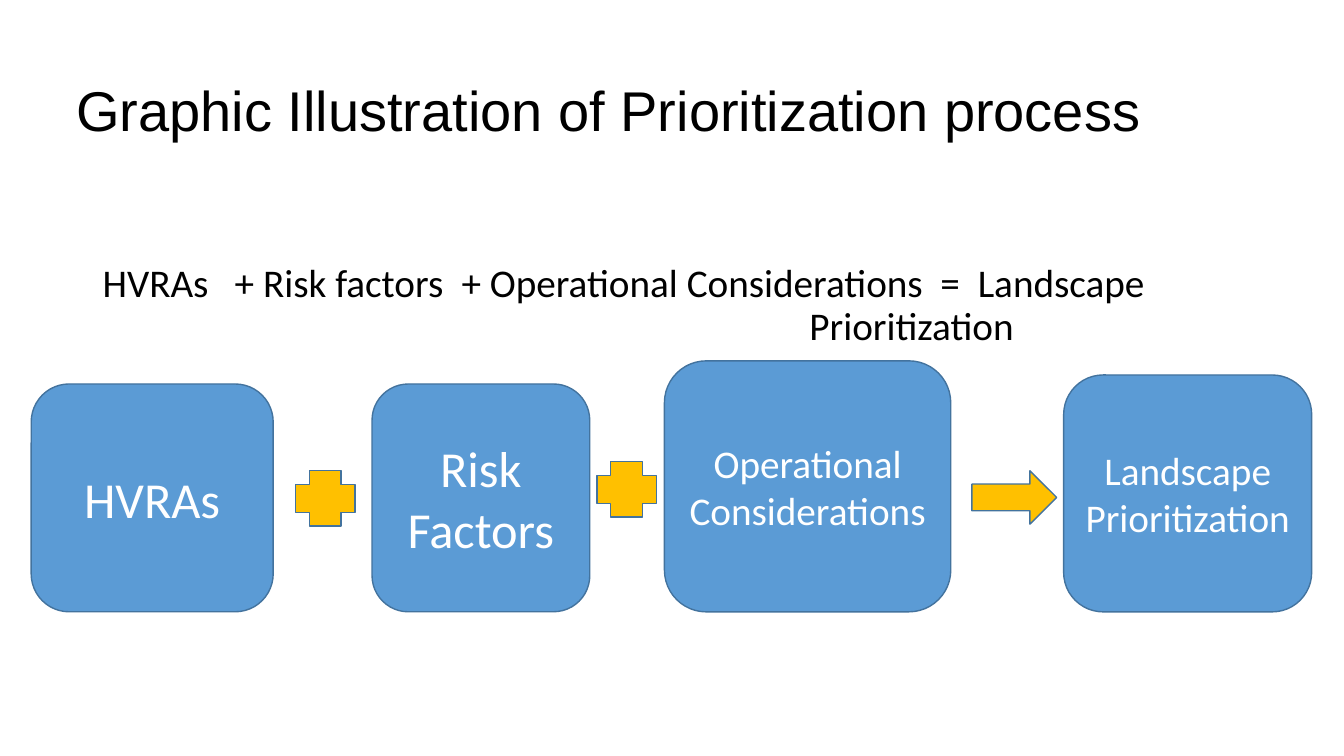
from dataclasses import dataclass

from lxml import etree
from pptx import Presentation
from pptx.dml.color import RGBColor
from pptx.enum.shapes import MSO_SHAPE
from pptx.enum.text import MSO_ANCHOR, PP_ALIGN
from pptx.oxml.ns import qn
from pptx.util import Inches, Pt

ROUNDED, PLUS, ARROW = MSO_SHAPE.ROUNDED_RECTANGLE, MSO_SHAPE.CROSS, MSO_SHAPE.RIGHT_ARROW
CENTER, LEFT = PP_ALIGN.CENTER, PP_ALIGN.LEFT
TOP, MIDDLE = MSO_ANCHOR.TOP, MSO_ANCHOR.MIDDLE


@dataclass(frozen=True)
class Theme:
    ink: RGBColor = RGBColor(0, 0, 0)
    white: RGBColor = RGBColor(255, 255, 255)
    blue: RGBColor = RGBColor(0x5B, 0x9B, 0xD5)
    gold: RGBColor = RGBColor(0xFF, 0xC0, 0)
    edge: RGBColor = RGBColor(0x43, 0x73, 0x9E)
    heading: str = "Arial"
    body: str = "Calibri"
    title: int = 40
    large: int = 36
    medium: int = 28


THEME = Theme()
STEPS = [
    ("HVRAs", 0, 2.4, 2.26, THEME.large),
    ("Risk Factors", 3.38, 2.16, 2.26, THEME.large),
    ("Operational Considerations", 6.28, 2.84, 2.49, THEME.medium),
    ("Landscape Prioritization", 10.24, 2.46, 2.35, THEME.medium),
]
OPERATORS = [
    (PLUS, 2.62, 0.86, 0.59, 0.55),
    (PLUS, 5.61, 0.77, 0.59, 0.55),
    (ARROW, 9.33, 0.86, 0.84, 0.53),
]
TERMS = ["HVRAs", "+ Risk factors", "+ Operational Considerations", "=", "Landscape"]
TERM_STOPS = [1.31, 3.56, 8.31, 8.68]
RESULT_INDENT = 7.01


def style(p, font, size, color, align=LEFT, spacing=1.0):
    p.alignment, p.line_spacing = align, spacing
    p.font.name, p.font.size, p.font.color.rgb = font, Pt(size), color


def add_text(s, box, anchor):
    tf = s.shapes.add_textbox(*map(Inches, box)).text_frame
    tf.word_wrap, tf.vertical_anchor = True, anchor
    return tf


def add_block(s, kind, box, fill):
    sp = s.shapes.add_shape(kind, *map(Inches, box))
    sp.shadow.inherit = False
    sp.fill.solid()
    sp.fill.fore_color.rgb = fill
    sp.line.color.rgb, sp.line.width = THEME.edge, Pt(1)
    return sp


def add_title(s, box):
    p = add_text(s, box, MIDDLE).paragraphs[0]
    p.text = "Graphic Illustration of Prioritization process"
    style(p, THEME.heading, THEME.title, THEME.ink, spacing=0.9)


def add_equation(s, box):
    tf = add_text(s, box, TOP)
    terms, result = tf.paragraphs[0], tf.add_paragraph()
    terms.text, result.text = "\t".join(TERMS), "Prioritization"
    tabs = etree.SubElement(terms._p.get_or_add_pPr(), qn("a:tabLst"))
    for stop in TERM_STOPS:
        etree.SubElement(tabs, qn("a:tab"), pos=str(Inches(stop)), algn="l")
    result._p.get_or_add_pPr().set("marL", str(Inches(RESULT_INDENT)))
    for p in (terms, result):
        style(p, THEME.body, THEME.medium, THEME.ink, spacing=0.9)


def add_process(s, box):
    left, top, _, height = box
    for label, x, w, h, size in STEPS:
        sp = add_block(s, ROUNDED, (left + x, top + height - h, w, h), THEME.blue)
        tf = sp.text_frame
        tf.word_wrap, tf.vertical_anchor = True, MIDDLE
        p = tf.paragraphs[0]
        p.text = label
        style(p, THEME.body, size, THEME.white, CENTER)
    for kind, x, y, w, h in OPERATORS:
        add_block(s, kind, (left + x, top + y + 0.23, w, h), THEME.gold)


def main():
    prs = Presentation()
    prs.slide_width, prs.slide_height = Inches(13.33), Inches(7.5)
    s = prs.slides.add_slide(prs.slide_layouts[6])
    add_title(s, (0.66, 0.4, 12.12, 1.45))
    add_equation(s, (0.92, 2.57, 11.87, 1))
    add_process(s, (0.31, 3.58, 12.7, 2.49))
    prs.save("out.pptx")


if __name__ == "__main__":
    main()
